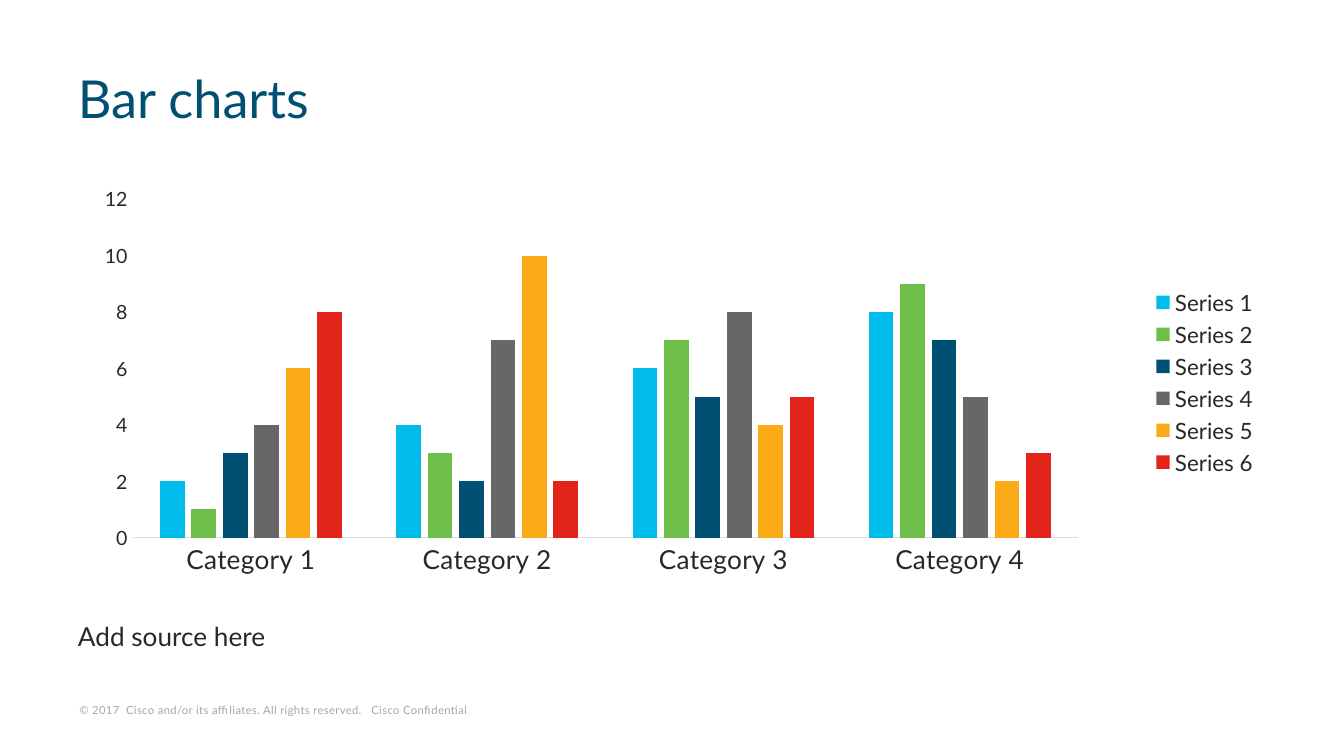
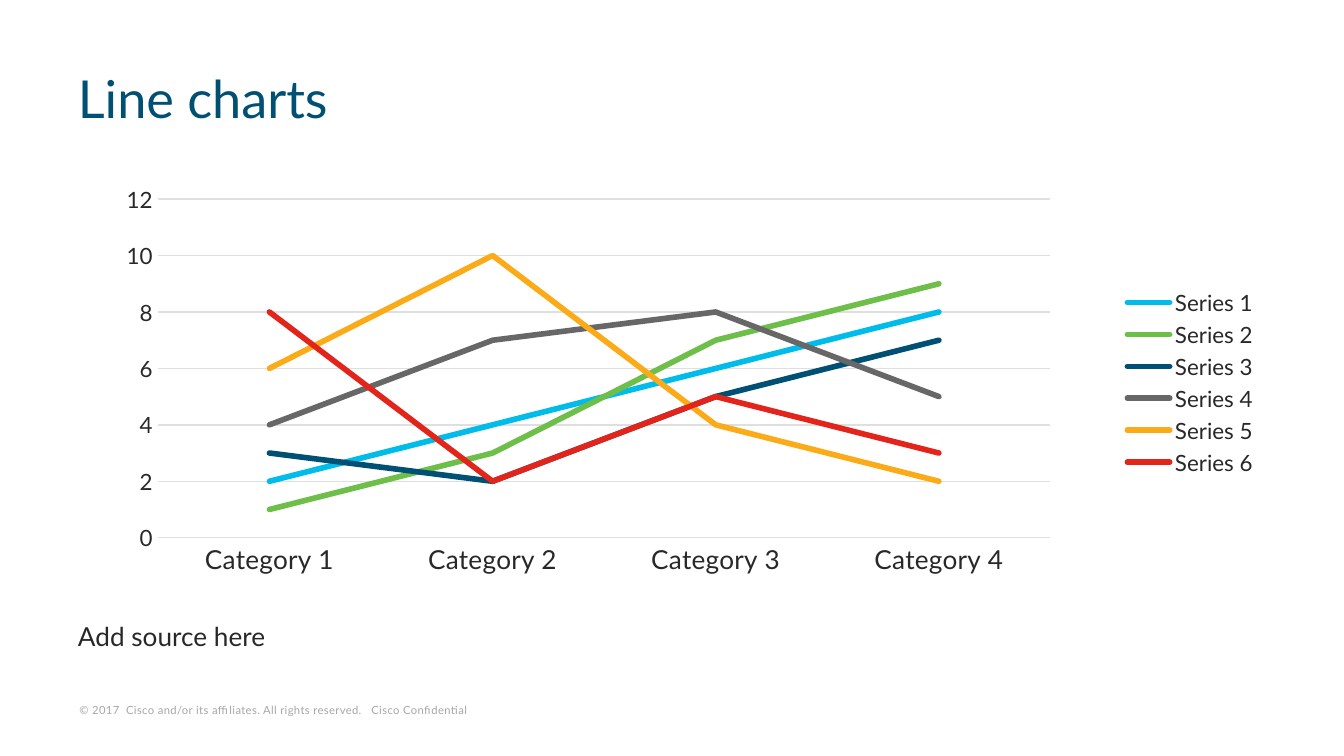
import pptx
import pptx.chart.data
import pptx.dml.color
import pptx.enum.chart
import pptx.enum.text
import pptx.oxml
import pptx.oxml.ns
import pptx.util
from lxml import etree

RGBColor = pptx.dml.color.RGBColor
Anchor = pptx.enum.text.MSO_ANCHOR
ChartType = pptx.enum.chart.XL_CHART_TYPE
qn = pptx.oxml.ns.qn
Pt = pptx.util.Pt

SKY = RGBColor(0x00, 0xBC, 0xEB)
GREEN = RGBColor(0x6E, 0xBE, 0x4A)
NAVY = RGBColor(0x00, 0x50, 0x73)
GRAY = RGBColor(0x67, 0x67, 0x67)
AMBER = RGBColor(0xFB, 0xAB, 0x18)
RED = RGBColor(0xE3, 0x24, 0x1B)
INK = RGBColor(0x28, 0x28, 0x28)
RULE = RGBColor(0xDF, 0xDF, 0xDF)
FAINT = RGBColor(0xA6, 0xA6, 0xA6)

FONT = "Lato"
CELL = pptx.util.Inches(0.1)  # side of one square grid cell
COLUMNS, ROWS = 100, 56.25

COPYRIGHT = "© 2017  Cisco and/or its affiliates. All rights reserved.   Cisco Confidential"
CATEGORIES = [f"Category {number}" for number in range(1, 5)]
SERIES = [
    (SKY, (2, 4, 6, 8)),
    (GREEN, (1, 3, 7, 9)),
    (NAVY, (3, 2, 5, 7)),
    (GRAY, (4, 7, 8, 5)),
    (AMBER, (6, 10, 4, 2)),
    (RED, (8, 2, 5, 3)),
]


def cells(*counts):
    """Turns counts of grid cells into lengths."""
    return [round(count * CELL) for count in counts]


class ChartDeck:
    """Holds the shared style and the slide being filled."""

    def __init__(self):
        self.deck = pptx.Presentation()
        self.deck.slide_width, self.deck.slide_height = cells(COLUMNS, ROWS)
        self.slide = None

    def start_slide(self, heading, source):
        self.slide = self.deck.slides.add_slide(self.deck.slide_layouts[1])
        self.footer()
        self.title(heading)
        self.source_note(source)

    def style(self, font, size, color):
        font.name, font.size = FONT, Pt(size)
        font.color.rgb = color

    def set_text(self, box, area, text, size, color, anchor, insets=(1, 0.5)):
        """Places the box on the grid and returns its only paragraph and run."""
        box.left, box.top, box.width, box.height = cells(*area)
        frame = box.text_frame
        frame.word_wrap = True
        frame.auto_size = pptx.enum.text.MSO_AUTO_SIZE.NONE
        frame.vertical_anchor = anchor
        side, end = cells(*insets)
        frame.margin_left = frame.margin_right = side
        frame.margin_top = frame.margin_bottom = end
        paragraph = frame.paragraphs[0]
        paragraph.alignment = pptx.enum.text.PP_ALIGN.LEFT
        paragraph.space_before = Pt(0)
        run = paragraph.add_run()
        run.text = text
        self.style(run.font, size, color)
        return paragraph, run

    def title(self, text):
        paragraph, _ = self.set_text(self.slide.shapes.title, (4.8, 3.7, 91.3, 8),
                                     text, 28, NAVY, Anchor.MIDDLE)
        paragraph.line_spacing = 0.8

    def source_note(self, text):
        paragraph, _ = self.set_text(self.slide.placeholders[1], (4.8, 45.4, 78.5, 3.6),
                                     text, 14, INK, Anchor.BOTTOM)
        properties = paragraph._p.get_or_add_pPr()
        hanging = cells(1.9)[0]
        properties.set("marL", str(hanging))
        properties.set("indent", str(-hanging))
        etree.SubElement(properties, qn("a:buNone"))

    def footer(self):
        area = (5.2, 51.9, 37.2, 1.7)
        box = self.slide.shapes.add_textbox(*cells(*area))
        _, run = self.set_text(box, area, COPYRIGHT, 6, FAINT, Anchor.BOTTOM, (0.7, 0.3))
        run._r.get_or_add_rPr().set("spc", "20")

    def chart(self, kind, value_size, plot_percent):
        data = pptx.chart.data.CategoryChartData()
        data.categories = CATEGORIES
        for number, (_, values) in enumerate(SERIES, 1):
            data.add_series(f"Series {number}", values)
        chart = self.slide.shapes.add_chart(
            kind, *cells(5.8, 13.1, 88.8, 30.7), data).chart
        chart.has_title = False
        self.style(chart.font, 10, INK)
        self.axes(chart, value_size)
        chart.has_legend = True
        chart.legend.position = pptx.enum.chart.XL_LEGEND_POSITION.RIGHT
        chart.legend.include_in_layout = False
        self.style(chart.legend.font, 12, INK)
        self.fix_plot_area(chart, plot_percent)
        return chart

    def axes(self, chart, value_size):
        no_ticks = pptx.enum.chart.XL_TICK_MARK.NONE
        for axis, size in ((chart.category_axis, 14), (chart.value_axis, value_size)):
            axis.major_tick_mark = axis.minor_tick_mark = no_ticks
            axis.has_major_gridlines = False
            self.style(axis.tick_labels.font, size, INK)
        self.rule(chart.category_axis.format.line)
        chart.value_axis.format.line.fill.background()
        chart.value_axis.minimum_scale = 0

    def rule(self, line):
        line.color.rgb, line.width = RULE, Pt(0.75)

    def fix_plot_area(self, chart, percent):
        """Sets the inner plot area as percentages of the chart's size."""
        plot_area = chart.element.find(".//" + qn("c:plotArea"))
        for automatic in plot_area.findall(qn("c:layout")):
            plot_area.remove(automatic)
        layout = etree.Element(qn("c:layout"))
        manual = etree.SubElement(layout, qn("c:manualLayout"))
        settings = [("layoutTarget", "inner"), ("xMode", "edge"), ("yMode", "edge")]
        settings += [(key, str(share / 100)) for key, share in zip("xywh", percent)]
        for key, value in settings:
            etree.SubElement(manual, qn("c:" + key)).set("val", value)
        plot_area.insert(0, layout)

    def bar_chart(self):
        chart = self.chart(ChartType.COLUMN_CLUSTERED, 10.5, (4.6, 5.6, 79.2, 82.1))
        plot = chart.plots[0]
        plot.vary_by_categories = False
        plot.gap_width, plot.overlap = 219, -27
        for bars, (color, _) in zip(plot.series, SERIES):
            bars.format.fill.solid()
            bars.format.fill.fore_color.rgb = color
            bars.invert_if_negative = False

    def line_chart(self):
        chart = self.chart(ChartType.LINE, 12, (6.7, 5.6, 74.8, 82.1))
        chart.value_axis.has_major_gridlines = True
        self.rule(chart.value_axis.major_gridlines.format.line)
        plot = chart.plots[0]
        plot.vary_by_categories = False
        for trend, (color, _) in zip(plot.series, SERIES):
            trend.smooth = False
            trend.format.line.color.rgb = color
            trend.format.line.width = Pt(3)
            trend.marker.style = pptx.enum.chart.XL_MARKER_STYLE.NONE
        for series in chart.element.iter(qn("c:ser")):
            outline = series.find(qn("c:spPr")).find(qn("a:ln"))
            outline.set("cap", "rnd")
            etree.SubElement(outline, qn("a:round"))


def main():
    charts = ChartDeck()
    charts.start_slide("Bar charts", "Add source here")
    charts.bar_chart()
    charts.start_slide("Line charts", "Add source here")
    charts.line_chart()
    charts.deck.save("out.pptx")


if __name__ == "__main__":
    main()
